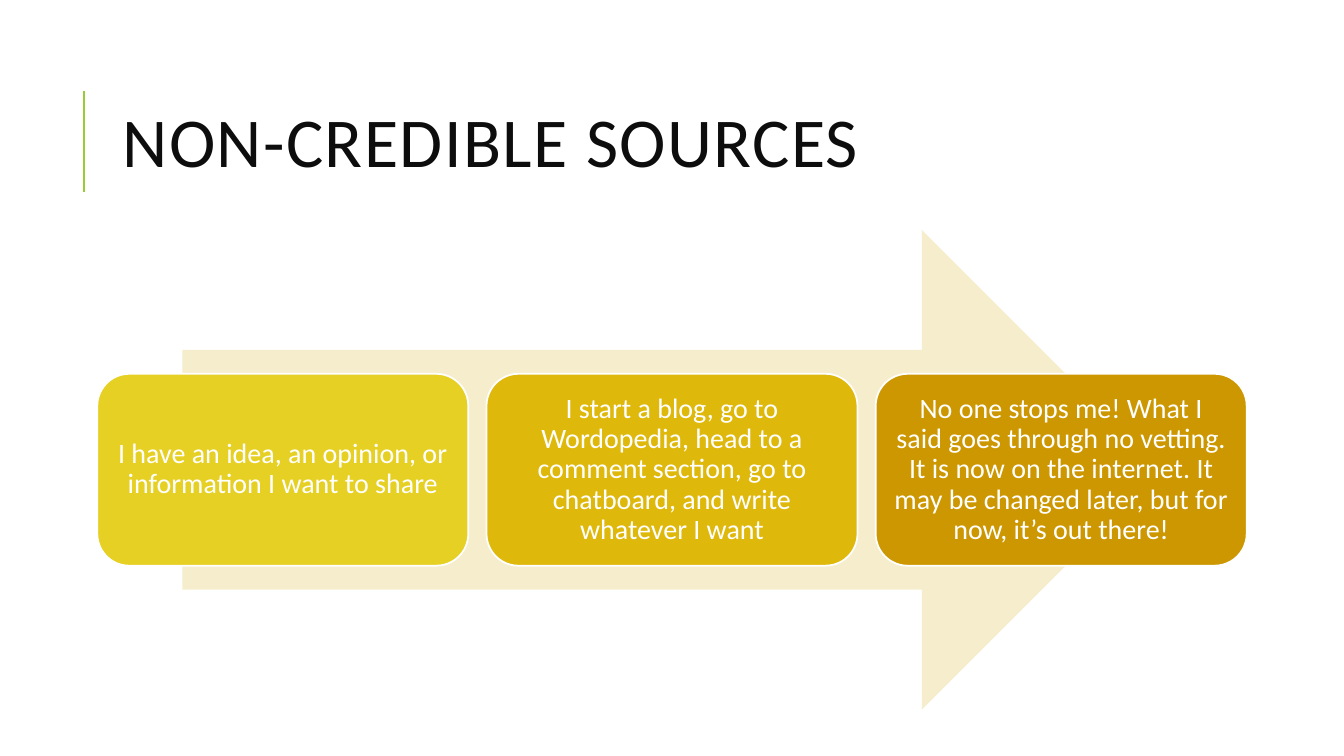
from pptx import Presentation
from pptx.dml.color import RGBColor
from pptx.enum import shapes, text
from pptx.oxml.ns import qn
from pptx.util import Pt

WHITE = RGBColor(0xFF, 0xFF, 0xFF)
INK = RGBColor(0x0D, 0x0D, 0x0D)
GREEN = RGBColor(0x99, 0xCB, 0x38)
CREAM = RGBColor(0xF6, 0xED, 0xCD)
YELLOW = RGBColor(0xE6, 0xD0, 0x24)
GOLD = RGBColor(0xDF, 0xB8, 0x0C)
OCHRE = RGBColor(0xCC, 0x97, 0x00)

STEPS = [
    ("I have an idea, an opinion, or information I want to share", YELLOW),
    ("I start a blog, go to Wordopedia, head to a comment section, go to "
     "chatboard, and write whatever I want", GOLD),
    ("No one stops me! What I said goes through no vetting. It is now on the "
     "internet. It may be changed later, but for now, it’s out there!", OCHRE),
]


def set_values(target, values):
    for name, value in values.items():
        setattr(target, name, value)


def write_text(shape, words, size, color, alignment, line_spacing, margin):
    frame = shape.text_frame
    set_values(frame, {
        "word_wrap": True,
        "vertical_anchor": text.MSO_ANCHOR.MIDDLE,
        "margin_left": Pt(margin), "margin_right": Pt(margin),
        "margin_top": Pt(margin), "margin_bottom": Pt(margin),
    })
    paragraph = frame.paragraphs[0]
    set_values(paragraph, {"alignment": alignment, "line_spacing": line_spacing})
    run = paragraph.add_run()
    run.text = words
    set_values(run.font, {"name": "Calibri", "size": Pt(size)})
    run.font.color.rgb = color
    return run


def add_filled_shape(slide, kind, left, top, width, height, color):
    shape = slide.shapes.add_shape(kind, Pt(left), Pt(top), Pt(width), Pt(height))
    shape.shadow.inherit = False
    shape.fill.solid()
    shape.fill.fore_color.rgb = color
    shape.line.fill.background()
    return shape


def add_heading(slide, left, top, width, height):
    rule = slide.shapes.add_connector(
        shapes.MSO_CONNECTOR.STRAIGHT,
        Pt(left), Pt(top + 90.7), Pt(left), Pt(top + 18.7))
    rule.line.color.rgb = GREEN
    rule.line.width = Pt(1.5)
    properties = rule._element.spPr
    properties.append(properties.makeelement(qn("a:effectLst"), {}))
    title = slide.shapes.add_textbox(
        Pt(left + 20.4), Pt(top), Pt(width - 20.4), Pt(height))
    run = write_text(title, "NON-CREDIBLE SOURCES", 50, INK,
                     text.PP_ALIGN.LEFT, 0.8, 7.2)
    run.font._element.set("spc", "100")


def add_process(slide, left, top, width, height):
    arrow_width = width * 0.852
    add_filled_shape(slide, shapes.MSO_SHAPE.RIGHT_ARROW,
                     left + (width - arrow_width) / 2, top, arrow_width, height, CREAM)
    gap = 13
    step_width = (width - gap * (len(STEPS) - 1)) / len(STEPS)
    step_height = height * 0.4
    for index, (words, color) in enumerate(STEPS):
        step = add_filled_shape(
            slide, shapes.MSO_SHAPE.ROUNDED_RECTANGLE,
            left + index * (step_width + gap), top + (height - step_height) / 2,
            step_width, step_height, color)
        step.line.color.rgb = WHITE
        step.line.width = Pt(1.25)
        write_text(step, words, 20, WHITE, text.PP_ALIGN.CENTER, 0.9, 6.6)


def main():
    presentation = Presentation()
    set_values(presentation, {"slide_width": Pt(960), "slide_height": Pt(540)})
    slide = presentation.slides.add_slide(presentation.slide_layouts[6])
    add_heading(slide, 60, 46.1, 786, 118)
    add_process(slide, 69.5, 164.2, 821, 342.7)
    presentation.save("out.pptx")


if __name__ == "__main__":
    main()
